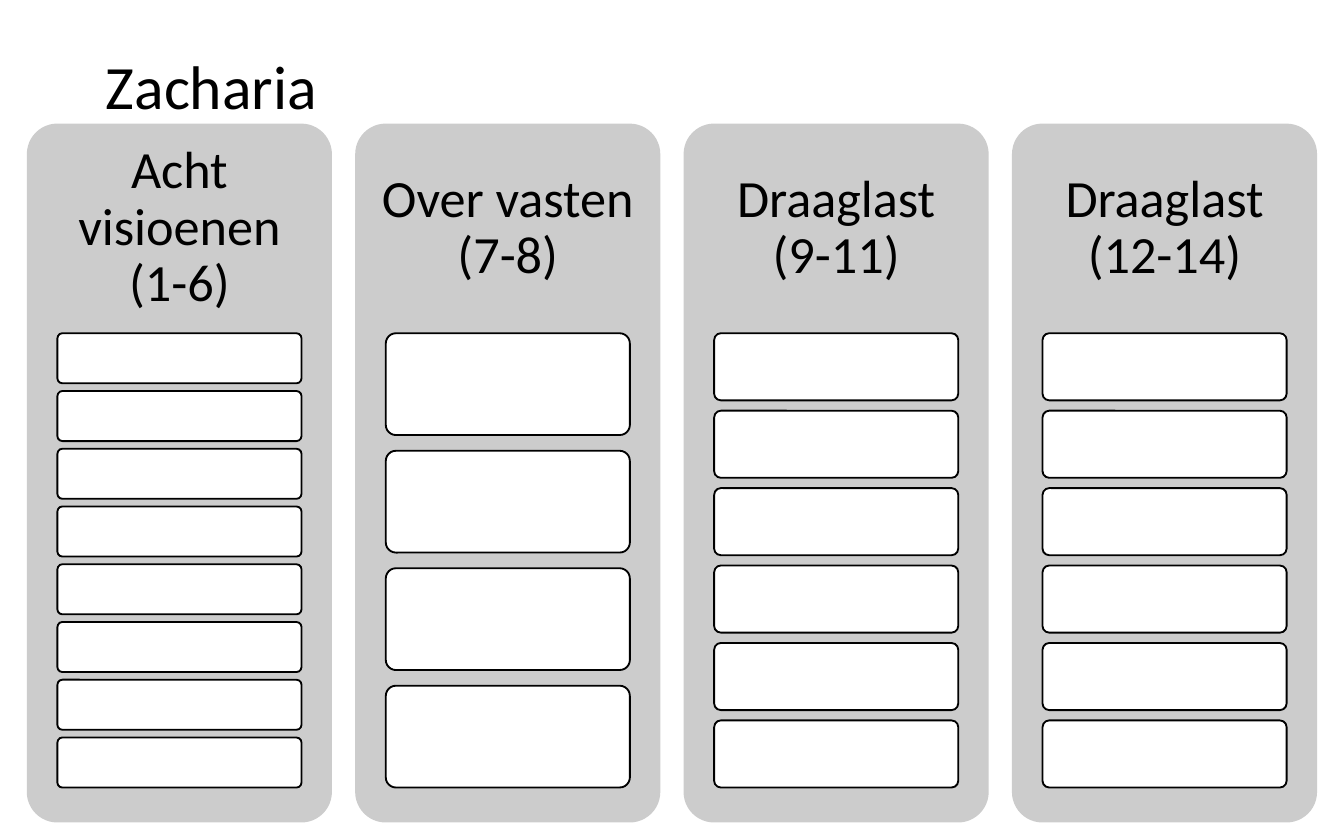
from pptx import Presentation
from pptx.dml.color import RGBColor
from pptx.enum import shapes, text
from pptx.util import Inches, Pt

BLACK = RGBColor(0, 0, 0)
GREY = RGBColor(0xCC, 0xCC, 0xCC)
WHITE = RGBColor(0xFF, 0xFF, 0xFF)

TITLE = "Zacharia"
PARTS = [
    ("Acht visioenen\n(1-6)", 8),
    ("Over vasten\n(7-8)", 4),
    ("Draaglast\n(9-11)", 6),
    ("Draaglast (12-14)", 6),
]

LEFT, TOP, WIDTH, HEIGHT = 0.2, 0.92, 2.27, 5.2
STEP = (10 - 2 * LEFT - WIDTH) / (len(PARTS) - 1)
HEAD = 0.3 * HEIGHT
STACK = 0.65 * HEIGHT
INNER = 0.8 * WIDTH
RATIO = 2 / 13


def add_text(group, words, box, size, align, inset):
    frame = group.add_textbox(*map(Inches, box)).text_frame
    frame.word_wrap = True
    frame.vertical_anchor = text.MSO_ANCHOR.MIDDLE
    for side, gap in zip(("left", "top", "right", "bottom"), inset):
        setattr(frame, "margin_" + side, Inches(gap))
    para = frame.paragraphs[0]
    para.text = words
    para.alignment = align
    para.line_spacing = 0.9
    style = {"name": "Calibri", "size": Pt(size)}
    for key, value in style.items():
        setattr(para.font, key, value)
    para.font.color.rgb = BLACK


def add_card(group, box, fill, line=None):
    card = group.add_shape(shapes.MSO_SHAPE.ROUNDED_RECTANGLE, *map(Inches, box))
    card.adjustments[0] = 0.1
    card.shadow.inherit = False
    card.fill.solid()
    card.fill.fore_color.rgb = fill
    if line is None:
        card.line.fill.background()
    else:
        card.line.color.rgb = line
        card.line.width = Pt(1)


def main():
    deck = Presentation()
    deck.slide_width, deck.slide_height = Inches(10), Inches(6.25)
    slide = deck.slides.add_slide(deck.slide_layouts[6])
    add_text(slide.shapes, TITLE, (0.69, 0.33, 8.62, 0.67), 33,
             text.PP_ALIGN.LEFT, (0.1, 0.05, 0.1, 0.05))
    group = slide.shapes.add_group_shape().shapes
    for col, (head, count) in enumerate(PARTS):
        x = LEFT + col * STEP
        add_card(group, (x, TOP, WIDTH, HEIGHT), GREY)
        add_text(group, head, (x, TOP, WIDTH, HEAD), 28,
                 text.PP_ALIGN.CENTER, (0.12,) * 4)
        tall = STACK / (count + (count - 1) * RATIO)
        for row in range(count):
            y = TOP + HEAD + row * tall * (1 + RATIO)
            add_card(group, (x + (WIDTH - INNER) / 2, y, INNER, tall), WHITE, BLACK)
    deck.save("out.pptx")


if __name__ == "__main__":
    main()
